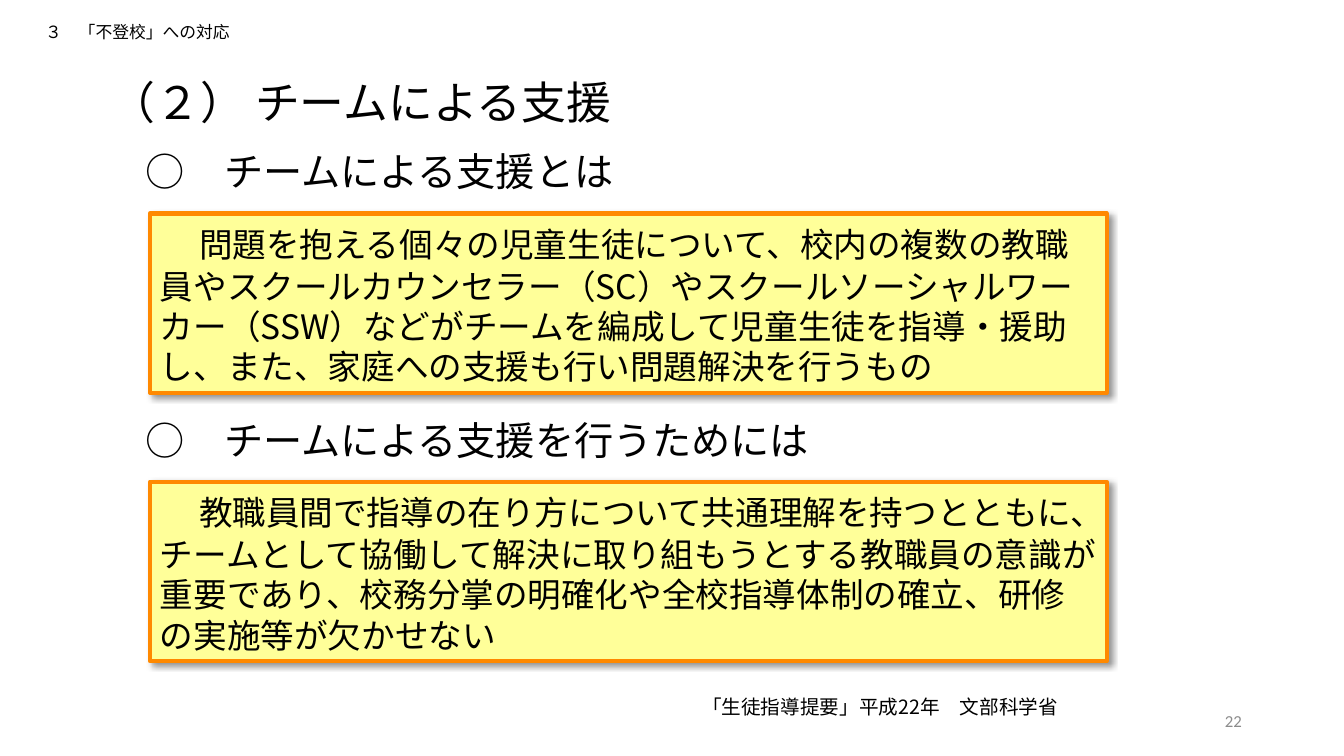
import pptx
import pptx.dml.color
import pptx.enum.shapes
import pptx.enum.text
import pptx.oxml
import pptx.oxml.ns
import pptx.util
from pptx.util import Cm

JAPANESE = "Noto Sans CJK JP"
BLACK = "000000"
ANCHOR = pptx.enum.text.MSO_ANCHOR
ALIGN = pptx.enum.text.PP_ALIGN
AUTO_SIZE = pptx.enum.text.MSO_AUTO_SIZE


def color(hex_string):
    return pptx.dml.color.RGBColor.from_string(hex_string)


def write(frame, runs, font=JAPANESE, ink=BLACK, anchor=ANCHOR.TOP,
          align=ALIGN.LEFT, grow=True):
    """Fill a text frame with one paragraph of (text, size) runs."""
    frame.word_wrap = True
    frame.auto_size = AUTO_SIZE.SHAPE_TO_FIT_TEXT if grow else AUTO_SIZE.NONE
    frame.vertical_anchor = anchor
    paragraph = frame.paragraphs[0]
    paragraph.alignment = align
    for text, size in runs:
        run = paragraph.add_run()
        run.text = text
        run.font.size = pptx.util.Pt(size)
        run.font.name = font
        run.font.color.rgb = color(ink)
        # East Asian typeface follows the Latin one
        east_asian = pptx.oxml.parse_xml(
            f'<a:ea {pptx.oxml.ns.nsdecls("a")} typeface="{font}"/>')
        run.font._element.find(pptx.oxml.ns.qn("a:latin")).addnext(east_asian)
    return paragraph


def add_label(slide, box, runs, **style):
    label = slide.shapes.add_textbox(*(Cm(length) for length in box))
    return write(label.text_frame, runs, **style)


def add_shadow(shape):
    shape.shadow.inherit = False
    effects = shape._element.spPr.find(pptx.oxml.ns.qn("a:effectLst"))
    effects.append(pptx.oxml.parse_xml(
        f'<a:outerShdw {pptx.oxml.ns.nsdecls("a")} blurRad="50800" dist="38100" '
        'dir="2700000" algn="tl" rotWithShape="0"><a:srgbClr val="000000">'
        '<a:alpha val="40000"/></a:srgbClr></a:outerShdw>'))


def add_topic(slide, box, heading, explanation):
    """Heading with a framed explanation below it."""
    left, top, width, height = box
    heading_height = 1.45
    panel_top = 1.78
    panel_indent = 0.35

    add_label(slide, (left, top, 17.4, heading_height), [(heading, 28)])

    panel = slide.shapes.add_shape(
        pptx.enum.shapes.MSO_SHAPE.RECTANGLE,
        Cm(left + panel_indent), Cm(top + panel_top),
        Cm(width - panel_indent), Cm(height - panel_top))
    panel.fill.solid()
    panel.fill.fore_color.rgb = color("FFFF99")
    panel.line.color.rgb = color("FF8900")
    panel.line.width = pptx.util.Pt(3)
    add_shadow(panel)
    write(panel.text_frame, [("　", 28), (explanation, 24)])


def add_header(slide, box, chapter, title):
    left, top, width, height = box
    chapter_line = add_label(slide, (left, top, 10.5, 0.61), [(chapter, 12)],
                             anchor=ANCHOR.BOTTOM, grow=False)
    chapter_line.line_spacing = 0.9
    title_height = 1.62
    add_label(slide, (left + 1.65, top + height - title_height,
                      width - 1.65, title_height), [(title, 32)])


def add_footer(slide, box, citation, number):
    left, top, width, height = box
    add_label(slide, (left, top, 11.53, 1.02), [("　", 18), (citation, 14)])
    number_width, number_height = 7.62, 1.02
    add_label(slide, (left + width - number_width, top + height - number_height,
                      number_width, number_height), [(number, 12)],
              font="Calibri", ink="8C8C8C", anchor=ANCHOR.MIDDLE,
              align=ALIGN.RIGHT, grow=False)


TOPICS = [
    ("○　チームによる支援とは",
     "問題を抱える個々の児童生徒について、校内の複数の教職員やスクールカウンセラー（SC）や"
     "スクールソーシャルワーカー（SSW）などがチームを編成して児童生徒を指導・援助し、"
     "また、家庭への支援も行い問題解決を行うもの"),
    ("○　チームによる支援を行うためには",
     "教職員間で指導の在り方について共通理解を持つとともに、チームとして協働して解決に"
     "取り組もうとする教職員の意識が重要であり、校務分掌の明確化や全校指導体制の確立、"
     "研修の実施等が欠かせない"),
]


def main():
    deck = pptx.Presentation()
    deck.slide_width, deck.slide_height = Cm(33.87), Cm(19.05)
    slide = deck.slides.add_slide(deck.slide_layouts[6])

    # Chapter and title
    add_header(slide, (0.89, 0.58, 17.15, 2.79),
               "３　「不登校」への対応", "（２） チームによる支援")

    # Topics, stacked at an equal pitch
    for index, (heading, explanation) in enumerate(TOPICS):
        add_topic(slide, (3.43, 3.6 + index * 6.76, 24.46, 6.3),
                  heading, explanation)

    # Citation and slide number
    add_footer(slide, (16.81, 17.25, 14.74, 1.42),
               "「生徒指導提要」平成22年　文部科学省", "22")

    deck.save("out.pptx")


if __name__ == "__main__":
    main()
